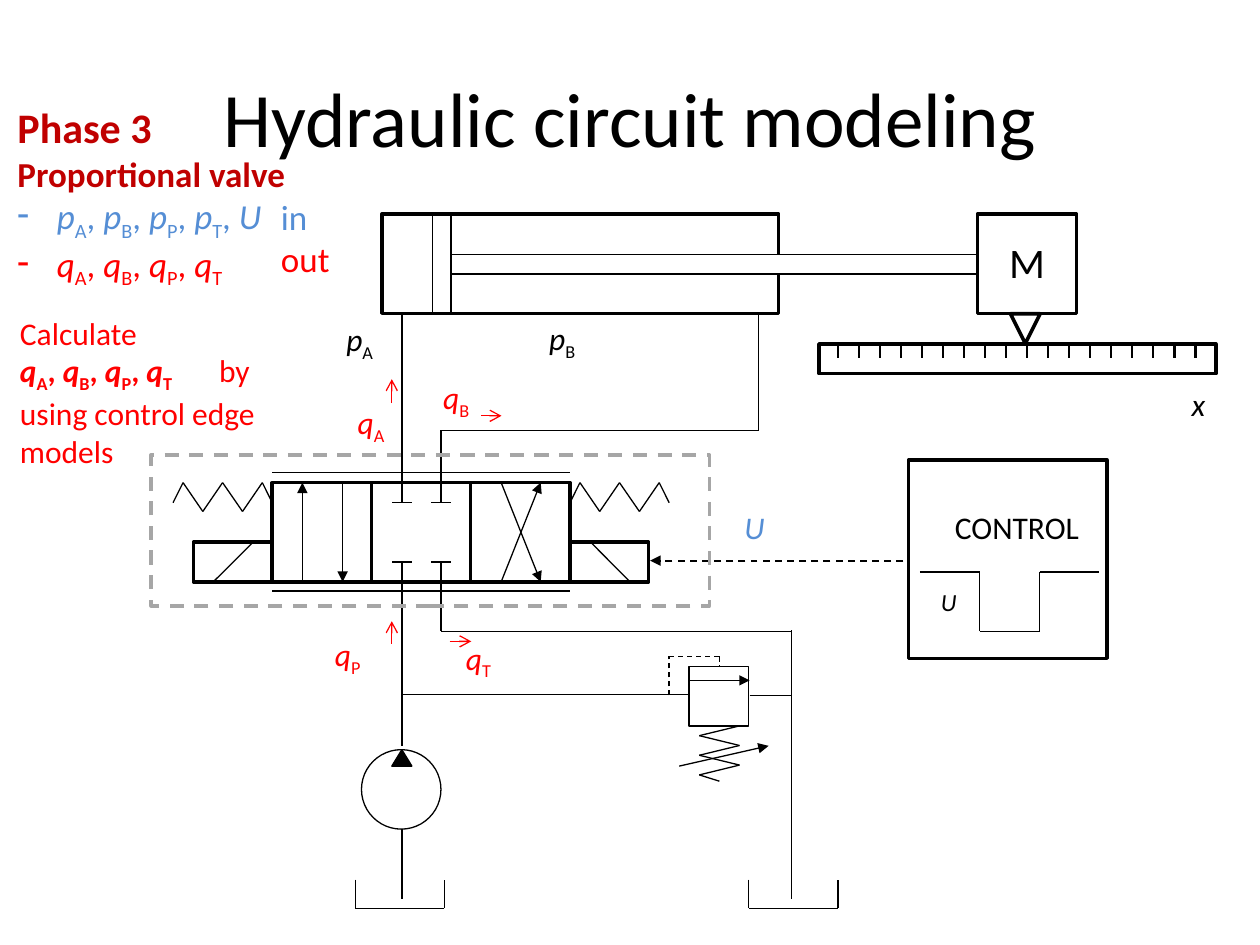
from pptx import Presentation
from pptx.dml.color import RGBColor
from pptx.enum.dml import MSO_LINE
from pptx.enum.shapes import MSO_CONNECTOR, MSO_SHAPE
from pptx.enum.text import MSO_ANCHOR, MSO_AUTO_SIZE, PP_ALIGN
from pptx.oxml.ns import qn
from pptx.util import Pt
from lxml import etree

RECTANGLE, OVAL = MSO_SHAPE.RECTANGLE, MSO_SHAPE.OVAL
TRIANGLE = MSO_SHAPE.ISOSCELES_TRIANGLE
STRAIGHT, DASH = MSO_CONNECTOR.STRAIGHT, MSO_LINE.DASH
MIDDLE, CENTER = MSO_ANCHOR.MIDDLE, PP_ALIGN.CENTER
FIT_TEXT = MSO_AUTO_SIZE.SHAPE_TO_FIT_TEXT

BLACK = RGBColor(0x00, 0x00, 0x00)
WHITE = RGBColor(0xFF, 0xFF, 0xFF)
GRAY = RGBColor(0xA6, 0xA6, 0xA6)
RED = RGBColor(0xFF, 0x00, 0x00)
DARK_RED = RGBColor(0xC0, 0x00, 0x00)
BLUE = RGBColor(0x55, 0x8E, 0xD5)

# Shared positions of the circuit
CELL = 56.7
VALVE_X, VALVE_Y = 155.6, 275.8
VALVE_RIGHT, VALVE_BOTTOM = VALVE_X + 3 * CELL, VALVE_Y + CELL
PORT_A, PORT_B = 229.7, 252
CYLINDER_Y = 122.4
CYLINDER_BOTTOM = CYLINDER_Y + CELL
RETURN_X, SUPPLY_Y, DRAIN_Y = 452.2, 397, 360.7


def symbols(letter, indices):
    """Runs for a comma-separated list of subscripted symbols."""
    runs = []
    for number, index in enumerate(indices):
        if number:
            runs.append((", ", ""))
        runs += [(letter, "i"), (index, "s")]
    return runs


class Diagram:
    """Draws styled elements on one slide; lengths are in points."""

    font_name = "Calibri"
    thin, thick = 0.75, 2

    def __init__(self, slide):
        self.slide = slide

    def shape(self, kind, x, y, width, height, fill=None, line=BLACK,
              weight=thick, dash=None, rotation=0):
        shape = self.slide.shapes.add_shape(kind, Pt(x), Pt(y), Pt(width), Pt(height))
        shape.shadow.inherit = False
        shape.rotation = rotation
        if fill is None:
            shape.fill.background()
        else:
            shape.fill.solid()
            shape.fill.fore_color.rgb = fill
        shape.line.color.rgb = line
        shape.line.width = Pt(weight)
        if dash:
            shape.line.dash_style = dash

    def line(self, x1, y1, x2, y2, color=BLACK, weight=thin, dash=None, arrow=None):
        connector = self.slide.shapes.add_connector(STRAIGHT, Pt(x1), Pt(y1), Pt(x2), Pt(y2))
        connector.line.color.rgb = color
        connector.line.width = Pt(weight)
        if dash:
            connector.line.dash_style = dash
        properties = connector._element.spPr
        if arrow:
            outline = properties.find(qn("a:ln"))
            etree.SubElement(outline, qn("a:tailEnd"), type=arrow)
        etree.SubElement(properties, qn("a:effectLst"))

    def polyline(self, points, **style):
        for start, end in zip(points, points[1:]):
            self.line(*start, *end, **style)

    def text(self, x, y, width, height, wrap=False):
        box = self.slide.shapes.add_textbox(Pt(x), Pt(y), Pt(width), Pt(height))
        box.text_frame.word_wrap = wrap
        box.text_frame.auto_size = FIT_TEXT
        return box.text_frame

    def paragraph(self, frame, runs, size=18, color=BLACK, bold=False,
                  bullet=None, tab=None):
        """Add runs of (text, flags); flags: i italic, s subscript, n not bold."""
        paragraph = frame.paragraphs[0]
        if paragraph.runs:
            paragraph = frame.add_paragraph()
        properties = paragraph._p.get_or_add_pPr()
        if bullet:
            properties.set("marL", str(Pt(22.5)))
            properties.set("indent", str(Pt(-22.5)))
            etree.SubElement(properties, qn("a:buChar"), char=bullet)
        if tab:
            tabs = etree.SubElement(properties, qn("a:tabLst"))
            etree.SubElement(tabs, qn("a:tab"), pos=str(Pt(tab)), algn="l")
        for text, flags in runs:
            run = paragraph.add_run()
            run.text = text
            run.font.name = self.font_name
            run.font.size = Pt(size)
            run.font.color.rgb = color
            run.font.bold = bold and "n" not in flags
            run.font.italic = "i" in flags
            if "s" in flags:
                run.font._element.set("baseline", "-25000")
        return paragraph

    def label(self, x, y, width, runs, height=28.8, **style):
        self.paragraph(self.text(x, y, width, height), runs, **style)


def draw_valve(diagram):
    for column in range(3):
        diagram.shape(RECTANGLE, VALVE_X + column * CELL, VALVE_Y, CELL, CELL)
    for y in (270, 337.7):
        diagram.line(VALVE_X, y, VALVE_RIGHT, y)
    # Flow paths of the outer positions
    for x1, y1, x2, y2 in ((172.8, VALVE_BOTTOM, 172.8, VALVE_Y),
                           (195.8, VALVE_Y, 195.8, VALVE_BOTTOM),
                           (286.4, VALVE_Y, 309, VALVE_BOTTOM),
                           (286.4, VALVE_BOTTOM, 309, VALVE_Y)):
        diagram.line(x1, y1, x2, y2, arrow="triangle")
    # Blocked ports of the centre position
    for x in (PORT_A, PORT_B):
        for edge, cap in ((VALVE_Y, 287.2), (VALVE_BOTTOM, 321.1)):
            diagram.line(x, edge, x, cap)
            diagram.line(x - 5.6, cap, x + 5.6, cap)
    # Solenoids and springs
    for x, slash_top, slash_bottom in ((110.6, 144.7, 121.9), (VALVE_RIGHT, 337.5, 360)):
        diagram.shape(RECTANGLE, x, 309.8, 45, 22.7)
        diagram.line(slash_top, 309.8, slash_bottom, VALVE_BOTTOM)
    heights = (287.3, VALVE_Y, 292.3, VALVE_Y, 292.3, VALVE_Y, 287.3)
    offsets = (0, 5.7, 17, 28.4, 39.7, 51, CELL)
    for start, direction in ((VALVE_X, -1), (VALVE_RIGHT, 1)):
        mirrored = heights if direction < 0 else heights[::-1]
        spans = offsets if direction < 0 else [CELL - offset for offset in offsets[::-1]]
        diagram.polyline([(start + direction * span, y) for span, y in zip(spans, mirrored)])


def draw_supply(diagram):
    # Pump, supply and return lines
    diagram.line(PORT_A, VALVE_BOTTOM, PORT_A, 426.2)
    diagram.line(PORT_A, SUPPLY_Y, 393.8, SUPPLY_Y)
    diagram.shape(OVAL, 206.6, 428.4, 45.4, 45.4, fill=WHITE, weight=0.75)
    diagram.shape(TRIANGLE, 223.9, 428.4, 11.5, 9.4, fill=BLACK, weight=0.75)
    diagram.line(PORT_A, 473.8, PORT_A, 514)
    diagram.polyline([(PORT_B, VALVE_BOTTOM), (PORT_B, DRAIN_Y), (RETURN_X, DRAIN_Y)])
    diagram.line(RETURN_X, 360, RETURN_X, 514)
    for x in (203, 427.9):
        diagram.polyline([(x, 502.6), (x, 519.1), (x + 51, 519.1), (x + 51, 502.6)])
    # Relief valve with pilot line and adjustable spring
    diagram.shape(RECTANGLE, 393.8, 380.9, 34, 34, weight=1)
    diagram.line(393.8, 388.8, 428.4, 388.8, arrow="triangle")
    diagram.line(428.4, 397.4, RETURN_X, 397.4)
    diagram.polyline([(382.3, 397.4), (382.3, 375.1), (411.1, 375.1), (411.1, 380.9)],
                     dash=DASH)
    coils = [(399.6 if turn % 2 else 422.6, 414.8 + 5.6 * turn) for turn in range(6)]
    diagram.polyline(coils + [(411.1, 446.4)])
    diagram.line(388.1, 437.8, 439.2, 426.2, arrow="triangle")


def draw_cylinder(diagram):
    diagram.shape(RECTANGLE, 218.2, CYLINDER_Y, 226.8, CELL)
    for x in (247, 257.8):
        diagram.line(x, CYLINDER_Y, x, CYLINDER_BOTTOM)
    diagram.shape(RECTANGLE, 257.8, 145.4, 300.5, 11.4, fill=WHITE, weight=1)
    diagram.line(PORT_A, VALVE_Y, PORT_A, CYLINDER_BOTTOM)
    diagram.polyline([(PORT_B, VALVE_Y), (PORT_B, 246), (433.5, 246), (433.5, CYLINDER_BOTTOM)])
    # Mass and position scale
    diagram.shape(RECTANGLE, 558.5, CYLINDER_Y, CELL, CELL)
    diagram.label(569.5, 131.8, 35.3, [("M", "")], height=36, size=24)
    diagram.shape(RECTANGLE, 468, 196.6, 226.8, 17)
    diagram.shape(TRIANGLE, 577.4, 179.3, 17, 17, rotation=180)
    for tick in range(18):
        x = 478.8 + 12.02 * tick
        diagram.line(x, 204.5, x, 196.6, weight=1.25)


def draw_control(diagram):
    diagram.shape(RECTANGLE, 519.1, 262.8, 113.4, 113.4)
    diagram.label(538.6, 286.6, 85.7, [("CONTROL", "")])
    diagram.polyline([(525.6, 326.9), (559.8, 326.9), (559.8, DRAIN_Y),
                      (594, DRAIN_Y), (594, 326.9), (628.2, 326.9)])
    diagram.label(530.6, 331.9, 23.8, [("U", "i")], height=24.5, size=14)
    diagram.line(516.2, 320.4, 371.5, 320.4, weight=1, dash=DASH, arrow="triangle")


def draw_labels(diagram):
    diagram.label(673.9, 216.7, 22.3, [("x", "i")])
    diagram.label(418.3, 286.6, 25.9, [("U", "i")], color=BLUE)
    for letter, index, x, y, color in (("p", "A", 190.8, 179.3, BLACK),
                                       ("p", "B", 306.7, 178.6, BLACK),
                                       ("q", "A", 197.3, 226.8, RED),
                                       ("q", "B", 246.2, 212.4, RED),
                                       ("q", "P", 184.3, 359.3, RED),
                                       ("q", "T", 259.2, 361.4, RED)):
        diagram.label(x, y, 30.5, symbols(letter, index), color=color)
    # Flow directions
    for x1, y1, x2, y2 in ((223.9, 230.4, 223.9, 216.7), (275, 237.6, 286.6, 237.6),
                           (223.9, 367.9, 223.9, 355), (257, 366.5, 269.3, 366.5)):
        diagram.line(x1, y1, x2, y2, color=RED, arrow="arrow")


def draw_notes(diagram):
    title = diagram.text(36, 21.6, 648, 90, wrap=True)
    title.auto_size = MSO_AUTO_SIZE.NONE
    title.vertical_anchor = MIDDLE
    heading = diagram.paragraph(title, [("Hydraulic circuit modeling", "")], size=44)
    heading.alignment = CENTER
    # Phase with inputs and outputs
    phase = diagram.text(2.9, 54.7, 200.9, 133.2, wrap=True)
    diagram.paragraph(phase, [("Phase 3", "")], size=24, color=DARK_RED, bold=True)
    diagram.paragraph(phase, [("Proportional valve", "")], size=20, color=DARK_RED, bold=True)
    inputs = symbols("p", "ABPT") + [(", ", ""), ("U", "i")]
    diagram.paragraph(phase, inputs, size=20, color=BLUE, bullet="-")
    diagram.paragraph(phase, symbols("q", "ABPT"), size=20, color=RED, bullet="-")
    directions = diagram.text(153.4, 108, 42.5, 116.6)
    diagram.paragraph(directions, [("in", "")], size=20, color=BLUE)
    diagram.paragraph(directions, [("out", "")], size=20, color=RED)
    # Task
    task = diagram.text(4.3, 175.7, 193.7, 94.3, wrap=True)
    diagram.paragraph(task, [("Calculate", "")], color=RED)
    diagram.paragraph(task, symbols("q", "ABPT") + [("\tby", "n")],
                      color=RED, bold=True, tab=113.8)
    diagram.paragraph(task, [("using control edge models", "")], color=RED)


def main():
    presentation = Presentation()
    presentation.slide_width, presentation.slide_height = Pt(720), Pt(540)
    diagram = Diagram(presentation.slides.add_slide(presentation.slide_layouts[6]))
    for draw in (draw_valve, draw_supply, draw_cylinder, draw_control, draw_notes):
        draw(diagram)
    # Border around the proportional valve
    diagram.shape(RECTANGLE, 86.4, 259.9, 319, 86.4, line=GRAY, dash=DASH)
    draw_labels(diagram)
    presentation.save("out.pptx")


if __name__ == "__main__":
    main()
